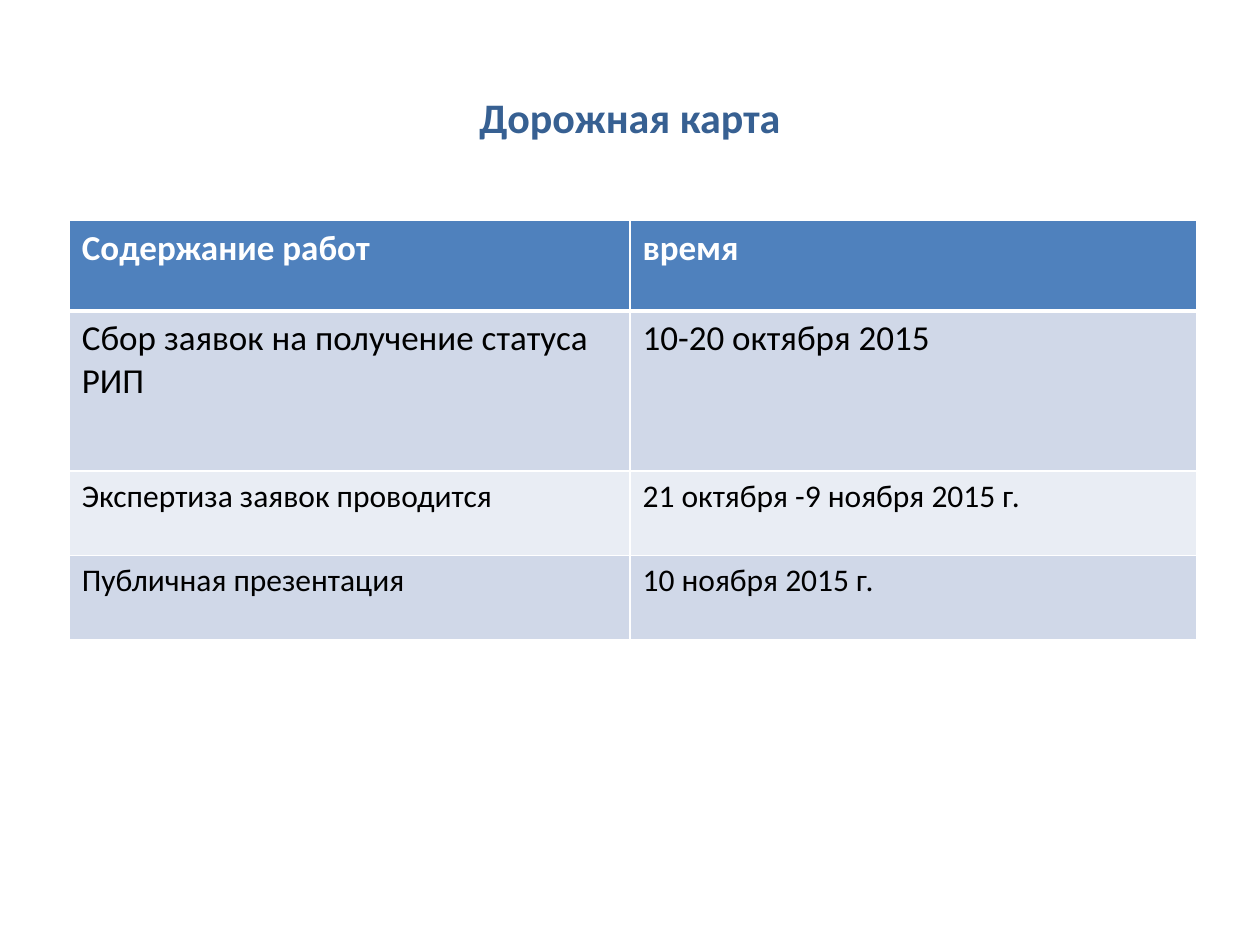
from pptx import Presentation
from pptx.dml.color import RGBColor
from pptx.enum.text import MSO_ANCHOR as Anchor, PP_ALIGN as Align
from pptx.oxml import parse_xml
from pptx.oxml.ns import nsdecls
from pptx.util import Inches, Pt

TITLE_BLUE = RGBColor(0x37, 0x60, 0x92)
HEADER_BLUE = RGBColor(0x4F, 0x81, 0xBD)
BAND_DARK = RGBColor(0xD0, 0xD8, 0xE8)
BAND_LIGHT = RGBColor(0xE9, 0xED, 0xF4)
WHITE = RGBColor(0xFF, 0xFF, 0xFF)
BLACK = RGBColor(0, 0, 0)
FONT = "Calibri"

COLUMN_WIDTHS = (4.45, 4.5)
# Row height, text size, cell texts
ROWS = (
    (0.72, 20, ("Содержание работ", "время")),
    (1.27, 20, ("Сбор заявок на получение статуса РИП", "10-20 октября 2015")),
    (0.67, 18, ("Экспертиза заявок проводится", "21 октября -9 ноября 2015 г.")),
    (0.67, 18, ("Публичная презентация", "10 ноября 2015 г.")),
)


def write_text(frame, text, size, color, bold=False, align=Align.LEFT):
    para = frame.paragraphs[0]
    para.alignment = align
    span = para.add_run()
    span.text = text
    span.font.name = FONT
    span.font.size = Pt(size)
    span.font.bold = bold
    span.font.color.rgb = color


def set_borders(cell, **widths):
    """Draw white borders; the fill must be set afterwards to keep XML order."""
    properties = cell._tc.get_or_add_tcPr()
    for side in ("L", "R", "T", "B"):
        properties.append(parse_xml(
            f'<a:ln{side} {nsdecls("a")} w="{Pt(widths.get(side, 1))}">'
            f'<a:solidFill><a:srgbClr val="{WHITE}"/></a:solidFill></a:ln{side}>'))


def add_title(page, left, top, width, height):
    box = page.shapes.add_textbox(left, top, width, height)
    frame = box.text_frame
    frame.word_wrap = True
    frame.vertical_anchor = Anchor.MIDDLE
    write_text(frame, "Дорожная карта", size=24, color=TITLE_BLUE,
               bold=True, align=Align.CENTER)


def add_schedule(page, left, top, width, height):
    table = page.shapes.add_table(
        len(ROWS), len(COLUMN_WIDTHS), left, top, width, height).table
    for column, column_width in zip(table.columns, COLUMN_WIDTHS):
        column.width = Inches(column_width)

    for index, (row_height, size, texts) in enumerate(ROWS):
        table.rows[index].height = Inches(row_height)
        is_header = index == 0
        band = BAND_DARK if index % 2 else BAND_LIGHT
        for cell, text in zip(table.rows[index].cells, texts):
            # A thick rule separates the header from the body
            set_borders(cell, T=3 if index == 1 else 1, B=3 if is_header else 1)
            cell.fill.solid()
            cell.fill.fore_color.rgb = HEADER_BLUE if is_header else band
            write_text(cell.text_frame, text, size=size, bold=is_header,
                       color=WHITE if is_header else BLACK)


def main():
    deck = Presentation()
    deck.slide_width, deck.slide_height = Inches(10), Inches(7.5)
    page = deck.slides.add_slide(deck.slide_layouts[6])
    add_title(page, Inches(0.5), Inches(0.3), Inches(9), Inches(1.25))
    add_schedule(page, Inches(0.55), Inches(1.75),
                 Inches(sum(COLUMN_WIDTHS)), Inches(sum(row[0] for row in ROWS)))
    deck.save("out.pptx")


if __name__ == "__main__":
    main()
